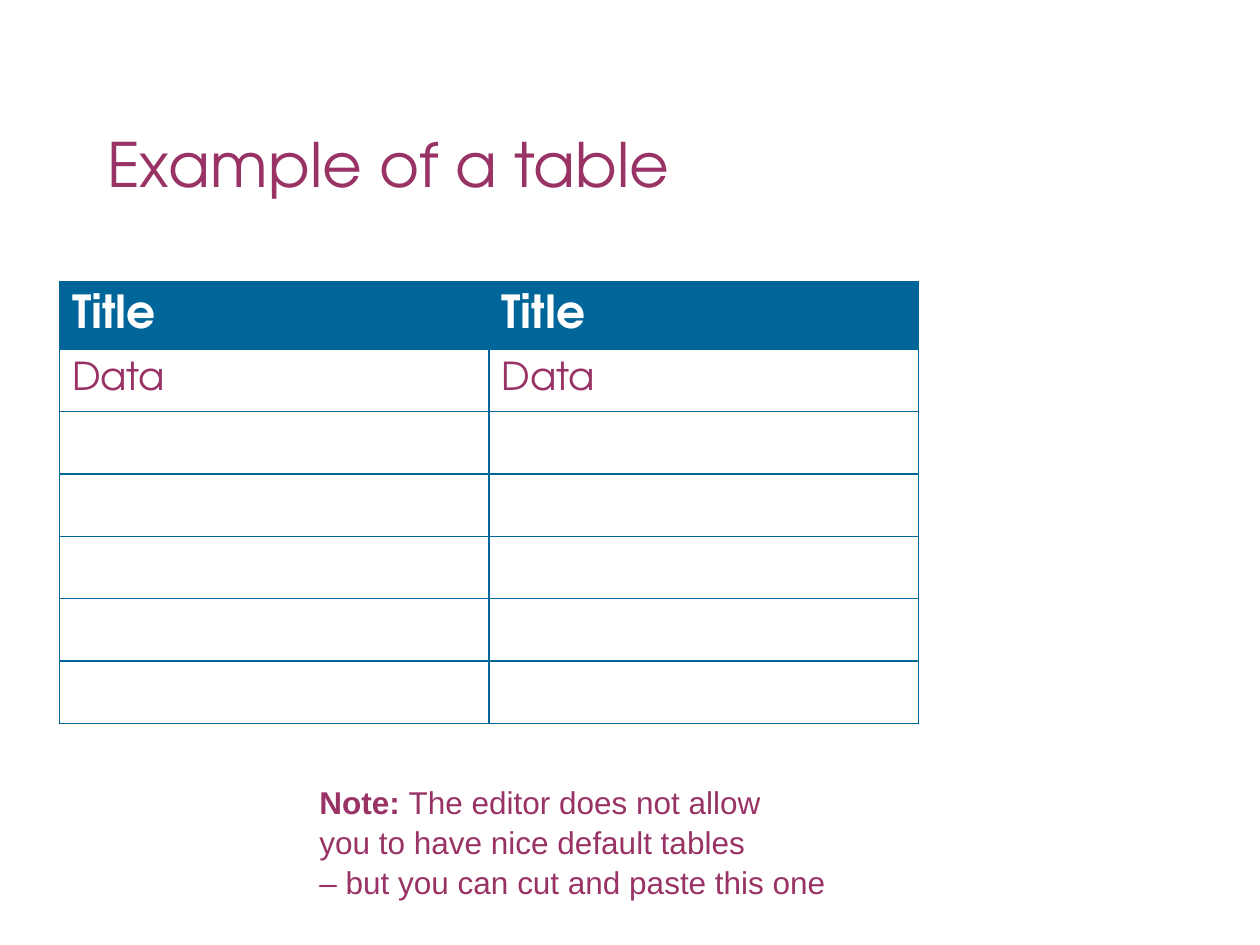
from lxml import etree
from pptx import Presentation
from pptx.dml.color import RGBColor
from pptx.enum.text import MSO_ANCHOR, PP_ALIGN
from pptx.oxml.ns import qn
from pptx.util import Pt

MIDDLE = MSO_ANCHOR.MIDDLE
LEFT = PP_ALIGN.LEFT
PLUM = RGBColor(0x99, 0x33, 0x66)
BLUE = RGBColor(0x00, 0x66, 0x99)
WHITE = RGBColor(0xFF, 0xFF, 0xFF)
DISPLAY_FONT = "TeX Gyre Adventor"
BODY_FONT = "Arial"
TITLE_ONLY = 5

ROWS = [["Title", "Title"], ["Data", "Data"]] + [["", ""]] * 5
HEADER_HEIGHT = 38.5


def add_text(paragraph, text, size, color=PLUM, font=DISPLAY_FONT, bold=False):
    paragraph.alignment = LEFT
    run = paragraph.add_run()
    run.text = text
    run.font.size = Pt(size)
    run.font.name = font
    run.font.bold = bold
    run.font.color.rgb = color


def place(shape, left, top, width, height):
    shape.left, shape.top = Pt(left), Pt(top)
    shape.width, shape.height = Pt(width), Pt(height)


def add_title(slide, box):
    title = slide.shapes.title
    place(title, *box)
    title.text_frame.vertical_anchor = MIDDLE
    add_text(title.text_frame.paragraphs[0], "Example of a table", size=35)


def set_borders(cell, color, width):
    properties = cell._tc.get_or_add_tcPr()
    for position, side in enumerate(("a:lnL", "a:lnR", "a:lnT", "a:lnB")):
        line = etree.Element(qn(side), w=str(Pt(width)))
        fill = etree.SubElement(line, qn("a:solidFill"))
        etree.SubElement(fill, qn("a:srgbClr"), val=str(color))
        properties.insert(position, line)


def add_data_table(slide, box):
    left, top, width, height = box
    frame = slide.shapes.add_table(len(ROWS), len(ROWS[0]), *map(Pt, box))
    table = frame.table
    table.first_row = table.horz_banding = False
    for column in table.columns:
        column.width = Pt(width / len(ROWS[0]))
    data_height = (height - HEADER_HEIGHT) / (len(ROWS) - 1)
    for row_index, labels in enumerate(ROWS):
        is_header = row_index == 0
        table.rows[row_index].height = Pt(HEADER_HEIGHT if is_header else data_height)
        for column_index, label in enumerate(labels):
            cell = table.cell(row_index, column_index)
            cell.vertical_anchor = MIDDLE
            if is_header:
                cell.fill.solid()
                cell.fill.fore_color.rgb = BLUE
            else:
                cell.fill.background()
            set_borders(cell, BLUE, width=1)
            if label:
                add_text(cell.text_frame.paragraphs[0], label,
                         size=26 if is_header else 22,
                         color=WHITE if is_header else PLUM, bold=is_header)


def add_note(slide, box):
    text_frame = slide.shapes.add_textbox(*map(Pt, box)).text_frame
    text_frame.word_wrap = True
    paragraph = text_frame.paragraphs[0]
    paragraph.line_spacing = 1.05
    add_text(paragraph, "Note: ", size=18, font=BODY_FONT, bold=True)
    lines = ["The editor does not allow",
             "you to have nice default tables",
             "– but you can cut and paste this one"]
    for index, line in enumerate(lines):
        if index:
            paragraph.add_line_break()
        add_text(paragraph, line, size=18, font=BODY_FONT)


def main():
    presentation = Presentation()
    presentation.slide_width, presentation.slide_height = Pt(720), Pt(540)
    slide = presentation.slides.add_slide(presentation.slide_layouts[TITLE_ONLY])
    add_title(slide, (54, 48, 612, 90))
    add_data_table(slide, (34, 161, 491, 252.5))
    add_note(slide, (175.5, 443, 323.5, 72))
    presentation.save("out.pptx")


if __name__ == "__main__":
    main()
